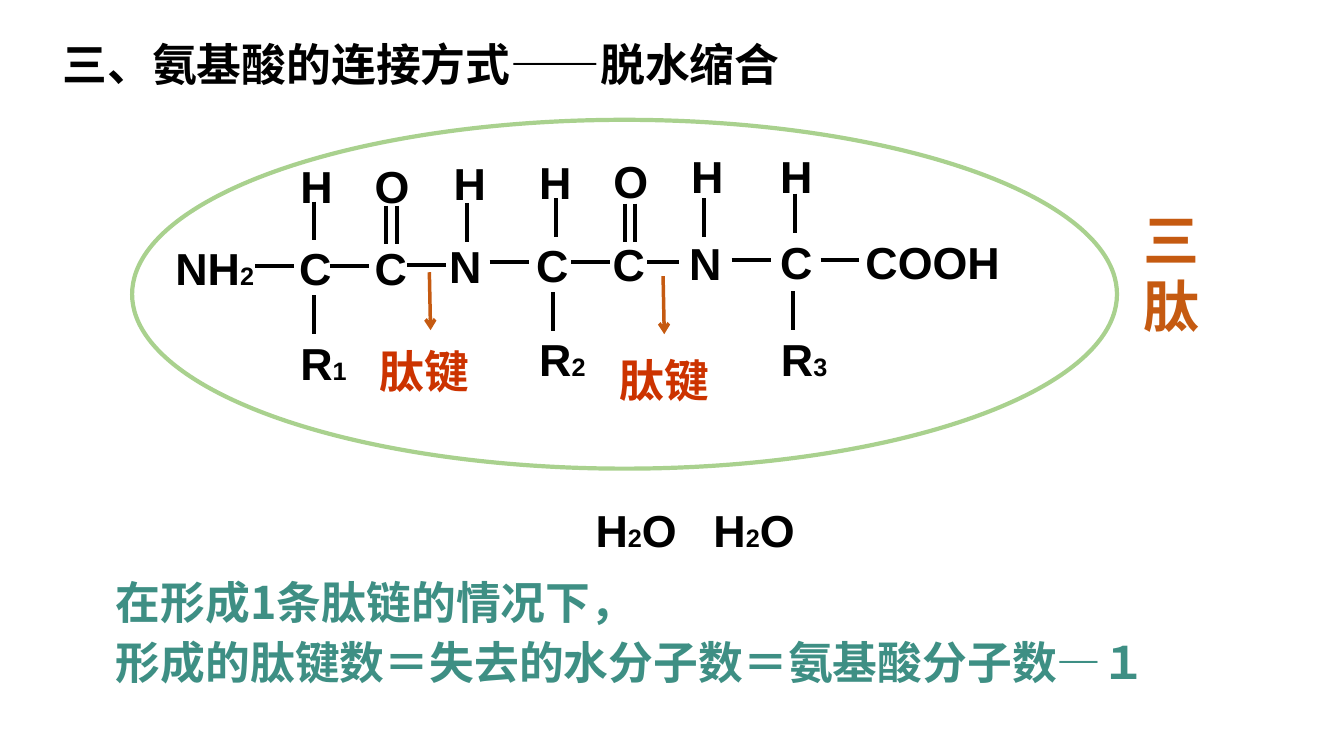
from itertools import groupby

from lxml.etree import SubElement
from pptx import Presentation
from pptx.dml.color import RGBColor
from pptx.enum.shapes import MSO_CONNECTOR, MSO_SHAPE
from pptx.enum.text import MSO_ANCHOR, MSO_AUTO_SIZE, PP_ALIGN
from pptx.oxml.ns import qn
from pptx.util import Cm, Pt

ATOMS = [
    ("NH2", 4.17, 5.94, 2.95),
    ("C", 7.29, 5.94, 1.37), ("H", 7.32, 3.86, 1.57), ("R1", 7.32, 8.31, 2.16),
    ("C", 9.19, 5.94, 1.37), ("O", 9.19, 3.86, 1.37),
    ("N", 11.07, 5.87, 1.57), ("H", 11.18, 3.78, 1.57),
    ("C", 13.26, 5.84, 1.37), ("H", 13.34, 3.76, 1.57), ("R2", 13.34, 8.23, 2.77),
    ("C", 15.19, 5.82, 1.37), ("O", 15.21, 3.73, 1.55),
    ("N", 17.12, 5.79, 1.57), ("H", 17.17, 3.61, 1.57),
    ("C", 19.41, 5.77, 1.37), ("H", 19.41, 3.61, 1.57), ("R3", 19.43, 8.23, 2.77),
    ("COOH", 21.56, 5.77, 3.96),
]
WATERS = [("H2O", 14.76, 12.52, 3), ("H2O", 17.73, 12.52, 3)]
BOND_LENGTH = 0.98
CHAIN_BONDS = [
    (6.43, 6.71), (8.31, 6.71), (10.26, 6.68), (12.34, 6.6),
    (14.4, 6.6), (18.44, 6.55), (20.68, 6.55),
]
SIDE_BONDS = [
    (7.91, 5.08), (7.91, 7.44), (9.73, 5.18), (10.01, 5.18),
    (11.76, 5.11), (14.02, 5), (13.93, 7.37), (15.75, 5.13),
    (16, 5.13), (17.75, 5), (20.04, 4.88), (19.99, 7.34),
]
PEPTIDE_LABELS = [(9.32, 8.53), (15.37, 8.76)]
PEPTIDE_ARROWS = [(10.82, 6.86), (16.71, 6.96)]


def color(value):
    return RGBColor.from_string(value)


def write(paragraph, text, size=32, font="Arial", fill="000000", bold=True):
    run = paragraph.add_run()
    run.text = text
    run.font.size = Pt(size)
    run.font.name = font
    run.font.bold = bold
    run.font.color.rgb = color(fill)
    east_asian = SubElement(run._r.get_or_add_rPr(), qn("a:ea"))
    east_asian.set("typeface", SlideBuilder.chinese_font)


class SlideBuilder:
    chinese_font = "Noto Sans CJK SC"
    black = "000000"
    orange = "C55A11"
    red = "CC3300"
    teal = "3E8F84"
    green = "A9D18E"

    def __init__(self, presentation):
        self.slide = presentation.slides.add_slide(presentation.slide_layouts[5])

    def prepare(self, shape):
        frame = shape.text_frame
        frame.word_wrap = True
        frame.auto_size = MSO_AUTO_SIZE.NONE
        frame.vertical_anchor = MSO_ANCHOR.MIDDLE
        return frame

    def title(self, text, left, top, width, height):
        shape = self.slide.shapes.title
        shape.left, shape.top = Cm(left), Cm(top)
        shape.width, shape.height = Cm(width), Cm(height)
        paragraph = self.prepare(shape).paragraphs[0]
        paragraph.alignment = PP_ALIGN.LEFT
        write(paragraph, text)

    def box(self, left, top, width, height=1.63):
        shape = self.slide.shapes.add_textbox(Cm(left), Cm(top), Cm(width), Cm(height))
        return self.prepare(shape)

    def formula(self, text, left, top, width):
        paragraph = self.box(left, top, width).paragraphs[0]
        for is_subscript, letters in groupby(text, str.isdigit):
            write(paragraph, "".join(letters), size=18 if is_subscript else 32)

    def chinese(self, lines, left, top, width, height=1.63, spacing=None, **style):
        frame = self.box(left, top, width, height)
        for index, line in enumerate(lines):
            paragraph = frame.add_paragraph() if index else frame.paragraphs[0]
            if spacing:
                paragraph.line_spacing = Pt(spacing)
            write(paragraph, line, font=self.chinese_font, **style)

    def line(self, left, top, across, down, stroke=black, weight=3, arrow=False):
        connector = self.slide.shapes.add_connector(
            MSO_CONNECTOR.STRAIGHT,
            Cm(left), Cm(top), Cm(left + across), Cm(top + down),
        )
        connector.line.color.rgb = color(stroke)
        connector.line.width = Pt(weight)
        if arrow:
            SubElement(connector.line._get_or_add_ln(), qn("a:tailEnd")).set("type", "arrow")
        SubElement(connector._element.spPr, qn("a:effectLst"))

    def ellipse(self, left, top, width, height):
        shape = self.slide.shapes.add_shape(
            MSO_SHAPE.OVAL, Cm(left), Cm(top), Cm(width), Cm(height)
        )
        shape.shadow.inherit = False
        shape.fill.background()
        shape.line.color.rgb = color(self.green)
        shape.line.width = Pt(3)


def main():
    presentation = Presentation()
    presentation.slide_width = Cm(33.87)
    presentation.slide_height = Cm(19.05)
    builder = SlideBuilder(presentation)

    builder.title("三、氨基酸的连接方式——脱水缩合", 1.32, 0.79, 21.16, 1.63)
    for formula in ATOMS + WATERS:
        builder.formula(*formula)
    for left, top in CHAIN_BONDS:
        builder.line(left, top, BOND_LENGTH, 0)
    builder.line(16.31, 6.6, 0.79, 0)
    for left, top in SIDE_BONDS:
        builder.line(left, top, 0, BOND_LENGTH)
    for left, top in PEPTIDE_LABELS:
        builder.chinese(["肽键"], left, top, 3, fill=builder.red)
    builder.ellipse(3.33, 3.02, 24.82, 8.79)
    for left, top in PEPTIDE_ARROWS:
        builder.line(left, top, 0.03, 1.46, stroke=builder.orange, weight=2.5, arrow=True)
    builder.chinese(
        ["三肽"], 28.58, 5.03, 2.59, 3.68, spacing=47, size=40, fill=builder.orange
    )
    builder.chinese(
        ["在形成1条肽链的情况下，", "形成的肽键数＝失去的水分子数＝氨基酸分子数—１"],
        2.67, 14.15, 29.29, 3.35, spacing=43.4, fill=builder.teal,
    )
    presentation.save("out.pptx")


if __name__ == "__main__":
    main()
